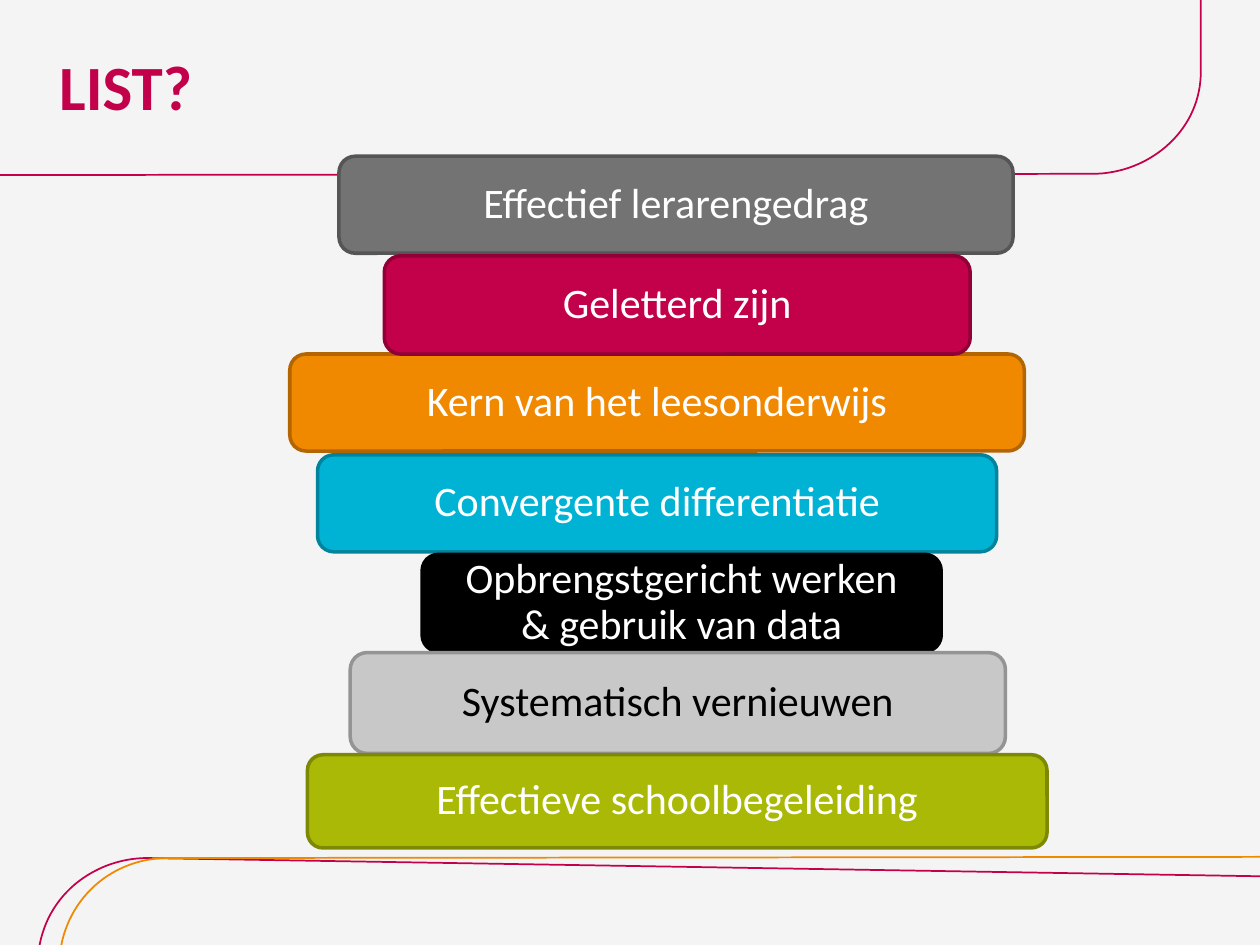
from dataclasses import dataclass

from pptx import Presentation
from pptx.dml.color import RGBColor
from pptx.enum import shapes, text
from pptx.util import Inches, Pt

FONT = "Calibri"
CRIMSON, ORANGE, WHITE, BLACK = "C3004A", "F08800", "FFFFFF", "000000"
Point = tuple[float, float]


@dataclass
class Bar:
    label: str
    left: float
    top: float
    width: float
    height: float
    fill: str
    line: str
    color: str = WHITE


@dataclass
class Swoosh:
    """A straight start, two Bezier curves around a corner and a straight end."""
    start: Point
    bend: Point
    curves: list[tuple[Point, Point, Point]]
    end: Point
    color: str


BARS = [
    Bar("Kern van het leesonderwijs", 2.3, 2.81, 5.83, 0.77, ORANGE, "B26500"),
    Bar("Convergente differentiatie", 2.52, 3.61, 5.39, 0.77, "00B3D5", "00849E"),
    Bar("Opbrengstgericht werken\v& gebruik van data", 3.35, 4.4, 4.12, 0.77, BLACK, BLACK),
    Bar("Systematisch vernieuwen", 2.78, 5.18, 5.2, 0.8, "C8C8C8", "949494", BLACK),
    Bar("Effectieve schoolbegeleiding", 2.44, 5.99, 5.87, 0.74, "A9B905", "7D8904"),
    Bar("Effectief lerarengedrag", 2.69, 1.24, 5.35, 0.77, "737373", "555555"),
    Bar("Geletterd zijn", 3.05, 2.03, 4.65, 0.78, CRIMSON, "900037"),
]

SWOOSHES = [
    Swoosh((0.27, 8.89), (0.3, 7.66),
           [((0.3, 7.43), (0.39, 7.21), (0.56, 7.05)),
            ((0.72, 6.9), (0.94, 6.81), (1.17, 6.81))], (10.3, 6.96), CRIMSON),
    Swoosh((0.47, 8.91), (0.47, 7.67),
           [((0.47, 7.44), (0.56, 7.22), (0.72, 7.06)),
            ((0.88, 6.9), (1.1, 6.81), (1.33, 6.81))], (10.46, 6.8), ORANGE),
    Swoosh((9.53, -0.58), (9.53, 0.57),
           [((9.53, 0.79), (9.44, 0.99), (9.28, 1.14)),
            ((9.12, 1.29), (8.9, 1.38), (8.67, 1.38))], (-0.46, 1.39), CRIMSON),
]


def rgb(value: str) -> RGBColor:
    return RGBColor.from_string(value)


def bezier(p0: Point, p1: Point, p2: Point, p3: Point, steps: int = 16) -> list[Point]:
    """Return the points of a cubic curve after its start."""
    points = []
    for i in range(1, steps + 1):
        t = i / steps
        weights = ((1 - t) ** 3, 3 * t * (1 - t) ** 2, 3 * t * t * (1 - t), t ** 3)
        x, y = (sum(w * p[axis] for w, p in zip(weights, (p0, p1, p2, p3)))
                for axis in (0, 1))
        points.append((x, y))
    return points


def add_swoosh(s, swoosh: Swoosh) -> None:
    points = [swoosh.bend]
    for curve in swoosh.curves:
        points += bezier(points[-1], *curve)
    points.append(swoosh.end)
    x, y = swoosh.start
    builder = s.shapes.build_freeform(Inches(x), Inches(y))
    builder.add_line_segments([(Inches(x), Inches(y)) for x, y in points], close=False)
    sp = builder.convert_to_shape()
    sp.shadow.inherit = False
    sp.fill.background()
    sp.line.color.rgb = rgb(swoosh.color)
    sp.line.width = Pt(1)


def add_bar(s, bar: Bar) -> None:
    sp = s.shapes.add_shape(
        shapes.MSO_SHAPE.ROUNDED_RECTANGLE, Inches(bar.left), Inches(bar.top),
        Inches(bar.width), Inches(bar.height))
    sp.shadow.inherit = False
    sp.fill.solid()
    sp.fill.fore_color.rgb = rgb(bar.fill)
    sp.line.color.rgb = rgb(bar.line)
    sp.line.width = Pt(2)
    tf = sp.text_frame
    tf.margin_left = tf.margin_right = tf.margin_top = tf.margin_bottom = Inches(0.04)
    tf.vertical_anchor = text.MSO_ANCHOR.MIDDLE
    p = tf.paragraphs[0]
    p.text = bar.label
    p.alignment = text.PP_ALIGN.CENTER
    p.line_spacing = 0.9
    for r in p.runs:
        r.font.name, r.font.size = FONT, Pt(24)
        r.font.color.rgb = rgb(bar.color)


def add_title(s, label: str) -> None:
    title = s.shapes.title
    title.left, title.top = Inches(0.47), Inches(0)
    title.width, title.height = Inches(9.06), Inches(1.35)
    tf = title.text_frame
    tf.text = label
    tf.margin_left = tf.margin_right = 0
    tf.vertical_anchor = text.MSO_ANCHOR.MIDDLE
    p = tf.paragraphs[0]
    p.alignment = text.PP_ALIGN.LEFT
    font = p.runs[0].font
    font.name, font.size, font.bold = FONT, Pt(36), True
    font.color.rgb = rgb(CRIMSON)


def main() -> None:
    prs = Presentation()
    prs.slide_width, prs.slide_height = Inches(10), Inches(7.5)
    s = prs.slides.add_slide(prs.slide_layouts[5])
    s.background.fill.solid()
    s.background.fill.fore_color.rgb = rgb("F4F4F4")
    add_title(s, "LIST?")
    for swoosh in SWOOSHES:
        add_swoosh(s, swoosh)
    for bar in BARS:
        add_bar(s, bar)
    prs.save("out.pptx")


if __name__ == "__main__":
    main()
